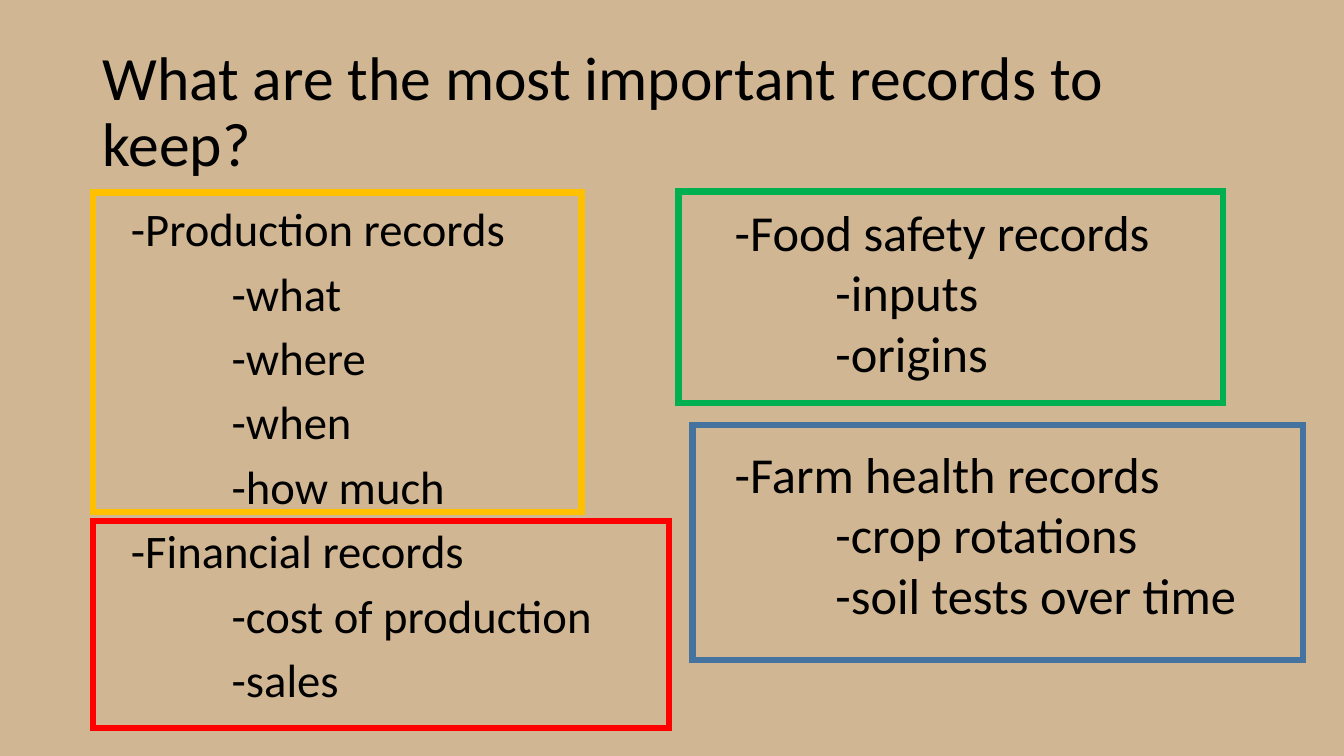
from dataclasses import dataclass
from lxml.etree import SubElement
from pptx import Presentation
from pptx.dml.color import RGBColor
from pptx.enum.shapes import MSO_SHAPE as Shape
from pptx.enum.text import MSO_ANCHOR as Anchor, MSO_AUTO_SIZE as AutoSize, PP_ALIGN as Align
from pptx.oxml.ns import qn
from pptx.util import Pt


@dataclass(frozen=True)
class Theme:
    font: str = "Calibri"
    background: str = "D0B693"
    ink: str = "000000"
    production: str = "FFC000"
    financial: str = "FF0000"
    safety: str = "00B050"
    health: str = "43739E"
    title_size: float = 44
    left_size: float = 33.3
    right_size: float = 36


theme = Theme()


def write_text(box, lines, size, spacing, gaps):
    frame = box.text_frame
    frame.word_wrap = True
    frame.auto_size = AutoSize.NONE
    frame.text = "\n".join(lines)
    for para, gap in zip(frame.paragraphs, gaps):
        para.alignment = Align.LEFT
        para.line_spacing = spacing
        para.space_before = Pt(gap)
        if para.text.startswith("\t"):
            tabs = SubElement(para._p.get_or_add_pPr(), qn("a:tabLst"))
            SubElement(tabs, qn("a:tab"), pos=str(Pt(72)), algn="l")
        for span in para.runs:
            span.font.name = theme.font
            span.font.size = Pt(size)
            span.font.color.rgb = RGBColor.from_string(theme.ink)


deck = Presentation()
deck.slide_width, deck.slide_height = Pt(960), Pt(540)
page = deck.slides.add_slide(deck.slide_layouts[5])
page.background.fill.solid()
page.background.fill.fore_color.rgb = RGBColor.from_string(theme.background)

title = page.shapes.title
title.left, title.top, title.width, title.height = Pt(66), Pt(28.75), Pt(828), Pt(104.4)
write_text(title, ["What are the most important records to keep?"], theme.title_size, 0.9, [0])
title.text_frame.vertical_anchor = Anchor.MIDDLE

left_lines = [
    "-Production records", "\t-what", "\t-where", "\t-when", "\t-how much",
    "-Financial records", "\t-cost of production", "\t-sales",
]
left_box = page.shapes.add_textbox(Pt(86.4), Pt(144), Pt(365.8), Pt(384.5))
write_text(left_box, left_lines, theme.left_size, 0.9, [0] + [10] * 7)

right_lines = [
    "-Food safety records", "\t-inputs", "\t-origins",
    "-Farm health records", "\t-crop rotations", "\t-soil tests over time",
]
right_box = page.shapes.add_textbox(Pt(517.7), Pt(140), Pt(436.3), Pt(312.5))
write_text(right_box, right_lines, theme.right_size, 1.0, [0, 0, 0, 43.2, 0, 0])

frames = [
    (theme.production, 66.2, 137.5, 349.2, 228.2),
    (theme.financial, 66.2, 372.2, 411.8, 147.6),
    (theme.safety, 484.6, 136.8, 388.8, 151.2),
    (theme.health, 494.6, 303.8, 436.3, 167.8),
]
for color, left, top, width, height in frames:
    outline = page.shapes.add_shape(Shape.RECTANGLE, Pt(left), Pt(top), Pt(width), Pt(height))
    outline.shadow.inherit = False
    outline.fill.background()
    outline.line.color.rgb = RGBColor.from_string(color)
    outline.line.width = Pt(4.5)
    SubElement(outline.line._ln, qn("a:miter"), lim="800000")

deck.save("out.pptx")
